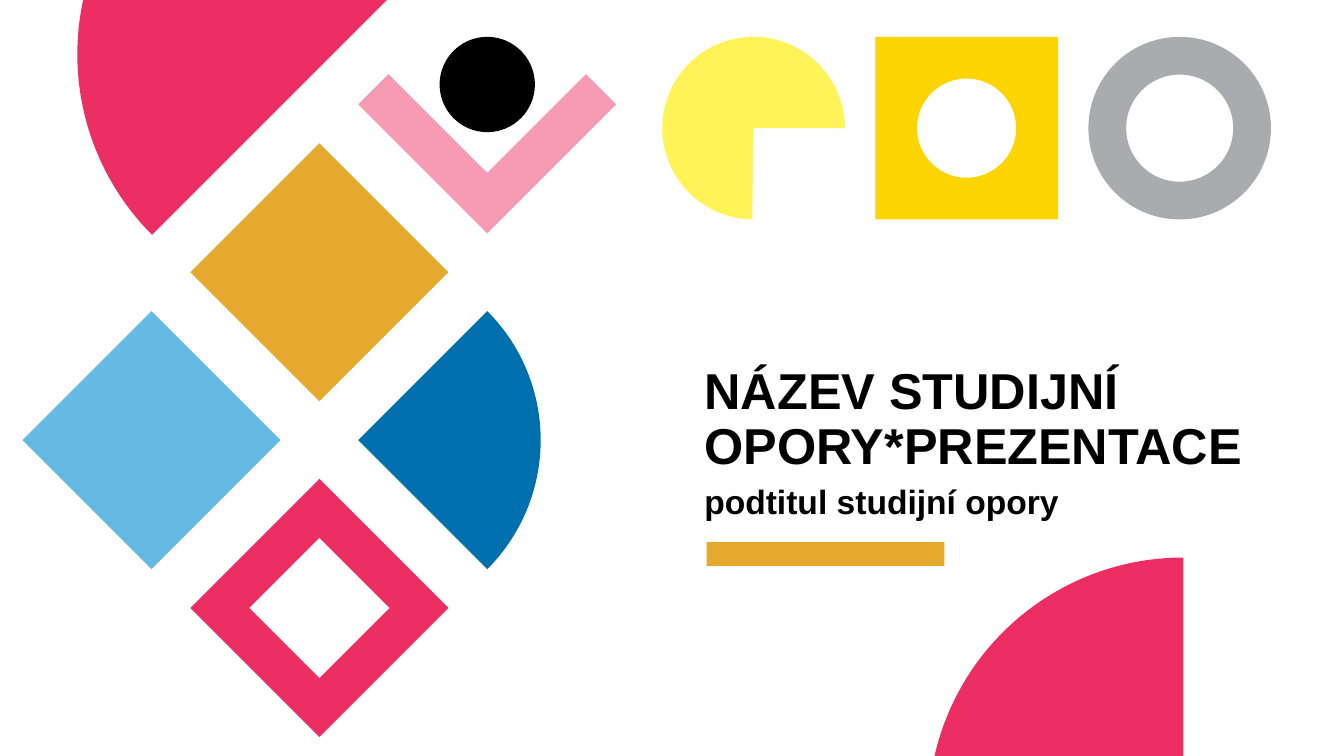
"""Build a cover slide with a mosaic of geometric tiles, a title and a subtitle."""
import math
from dataclasses import dataclass

from lxml import etree
from pptx import Presentation
from pptx import util as u
from pptx.dml.color import RGBColor
from pptx.enum import shapes, text
from pptx.oxml import ns

Point = tuple[float, float]
Segment = tuple[Point, ...]
Kind = shapes.MSO_SHAPE


@dataclass(frozen=True)
class Theme:
    font: str = "Arial"
    title_size: int = 36
    subtitle_size: int = 24
    black: str = "000000"
    crimson: str = "ED2E62"
    pink: str = "F59BB3"
    gold: str = "E5AA2D"
    sky: str = "64BAE3"
    blue: str = "006FAD"
    lemon: str = "FFF358"
    yellow: str = "FCD500"
    grey: str = "A9ABAE"


@dataclass(frozen=True)
class Box:
    left: float
    top: float
    width: float
    height: float


@dataclass(frozen=True)
class Preset:
    kind: Kind
    box: Box
    color: str
    rotation: float = 0
    adjustments: tuple[float, ...] = ()


@dataclass(frozen=True)
class Outline:
    contours: tuple[list[Segment], ...]
    color: str
    rotation: float = 0


THEME = Theme()
SLIDE_WIDTH, SLIDE_HEIGHT = 33.87, 19.05
TILE = 4.6
ROW_TOP = 0.93
DISC_RADIUS = 6.43


def tile_center(column: int, row: int) -> Point:
    return 3.82 + 4.23 * column, 6.86 + 4.23 * row


def square_box(center: Point, side: float = TILE) -> Box:
    return Box(center[0] - side / 2, center[1] - side / 2, side, side)


def row_center(index: int) -> Point:
    return 18.99 + 5.37 * index, ROW_TOP + TILE / 2


def polygon(center: Point, offsets: list[Point]) -> list[Segment]:
    return [((center[0] + x, center[1] + y),) for x, y in offsets]


def square(center: Point, side: float = TILE) -> list[Segment]:
    half = side / 2
    return polygon(center, [(-half, -half), (half, -half), (half, half), (-half, half)])


def arc(center: Point, radius: float, *angles: float) -> list[Segment]:
    def at(angle: float, pull: float = 0) -> Point:
        turn = math.radians(angle)
        return (center[0] + radius * (math.cos(turn) - pull * math.sin(turn)),
                center[1] + radius * (math.sin(turn) + pull * math.cos(turn)))

    segments: list[Segment] = [(at(angles[0]),)]
    for start, end in zip(angles, angles[1:]):
        pull = 4 / 3 * math.tan(math.radians(end - start) / 4)
        segments.append((at(start, pull), at(end, -pull), at(end)))
    return segments


def circle(center: Point, radius: float) -> list[Segment]:
    return arc(center, radius, 270, 180, 90, 0, -90)


def corner(center: Point, thickness: float = 1.08) -> list[Segment]:
    half = TILE / 2
    inner = thickness - half
    return polygon(center, [(-half, -half), (inner, -half), (inner, -inner),
                            (half, -inner), (half, half), (-half, half)])


def elements() -> list[Preset | Outline]:
    pie_center = (tile_center(2, 1)[0] - TILE / math.sqrt(2), tile_center(2, 1)[1])
    dot_center = (tile_center(2, 0)[0], ROW_TOP + 1.2)
    frame, window, ring = tile_center(1, 2), row_center(1), row_center(2)
    top_disc, bottom_disc = (8.38, 1.37), (29.82, 20.48)
    top_cut = 180 + math.degrees(math.asin(top_disc[1] / DISC_RADIUS))
    bottom_cut = 180 + math.degrees(math.asin((bottom_disc[1] - SLIDE_HEIGHT) / DISC_RADIUS))
    return [
        Preset(Kind.RECTANGLE, Box(17.81, 13.66, 5.99, 0.6), THEME.gold),
        Preset(Kind.RECTANGLE, square_box(tile_center(0, 1)), THEME.sky, 315),
        Preset(Kind.RECTANGLE, square_box(tile_center(1, 0)), THEME.gold, 315),
        Outline((square(frame, 2.5), square(frame)), THEME.crimson, 315),
        Preset(Kind.PIE, square_box(pie_center, 2 * TILE), THEME.blue, 315, (0, 54)),
        Outline((corner(tile_center(2, -1)),), THEME.pink, 315),
        Outline((circle(window, 1.25), square(window)), THEME.yellow),
        Preset(Kind.PIE, square_box(row_center(0)), THEME.lemon, 90, (0.49, 162)),
        Preset(Kind.OVAL, square_box(dot_center, 2.4), THEME.black),
        Outline((circle(ring, 1.35), circle(ring, TILE / 2)), THEME.grey),
        Outline((arc(top_disc, DISC_RADIUS, 135, 180, top_cut) + [((sum(top_disc), 0),)],),
                THEME.crimson),
        Outline((arc(bottom_disc, DISC_RADIUS, bottom_cut, 270)
                 + [((bottom_disc[0], SLIDE_HEIGHT),)],), THEME.crimson),
    ]


def draw_preset(slide, preset: Preset):
    box = preset.box
    shape = slide.shapes.add_shape(preset.kind, u.Cm(box.left), u.Cm(box.top),
                                   u.Cm(box.width), u.Cm(box.height))
    for index, value in enumerate(preset.adjustments):
        shape.adjustments[index] = value
    return shape


def draw_outline(slide, outline: Outline):
    builder = None
    for contour in outline.contours:
        points = [(u.Cm(x), u.Cm(y)) for segment in contour for x, y in segment]
        if builder is None:
            builder = slide.shapes.build_freeform(*points[0])
        else:
            builder.move_to(*points[0])
        builder.add_line_segments(points[1:], close=True)
    shape = builder.convert_to_shape()
    lines = iter(list(shape._element.iter(ns.qn("a:lnTo"))))
    for segment in (segment for contour in outline.contours for segment in contour[1:]):
        parts = [next(lines) for _ in segment]
        if len(parts) == 3:
            curve = etree.Element(ns.qn("a:cubicBezTo"))
            parts[0].addprevious(curve)
            for part in parts:
                curve.append(part[0])
                part.getparent().remove(part)
    return shape


def draw(slide, element: Preset | Outline) -> None:
    shape = (draw_preset if isinstance(element, Preset) else draw_outline)(slide, element)
    shape.rotation = element.rotation
    shape.shadow.inherit = False
    shape.fill.solid()
    shape.fill.fore_color.rgb = RGBColor.from_string(element.color)
    shape.line.fill.background()


def write(shape, box: Box, lines: list[str], size: int, anchor: text.MSO_ANCHOR,
          space_before: float = 0) -> None:
    shape.left, shape.top = u.Cm(box.left), u.Cm(box.top)
    shape.width, shape.height = u.Cm(box.width), u.Cm(box.height)
    frame = shape.text_frame
    frame.word_wrap = True
    frame.auto_size = text.MSO_AUTO_SIZE.NONE
    frame.vertical_anchor = anchor
    paragraph = frame.paragraphs[0]
    paragraph.alignment = text.PP_ALIGN.LEFT
    paragraph.line_spacing = 0.9
    paragraph.space_before = u.Pt(space_before)
    for index, line in enumerate(lines):
        if index:
            paragraph.add_line_break()
        run = paragraph.add_run()
        run.text = line
        run.font.name, run.font.size, run.font.bold = THEME.font, u.Pt(size), True
        run.font.color.rgb = RGBColor.from_string(THEME.black)


def main() -> None:
    presentation = Presentation()
    presentation.slide_width, presentation.slide_height = u.Cm(SLIDE_WIDTH), u.Cm(SLIDE_HEIGHT)
    slide = presentation.slides.add_slide(presentation.slide_layouts[5])
    write(slide.shapes.title, Box(17.5, 9.08, 14.22, 3.02),
          ["NÁZEV STUDIJNÍ", "OPORY*PREZENTACE"], THEME.title_size, text.MSO_ANCHOR.BOTTOM)
    write(slide.shapes.add_textbox(0, 0, 0, 0), Box(17.5, 12.11, 12.5, 1.17),
          ["podtitul studijní opory"], THEME.subtitle_size, text.MSO_ANCHOR.TOP, 10)
    for element in elements():
        draw(slide, element)
    presentation.save("out.pptx")


if __name__ == "__main__":
    main()
